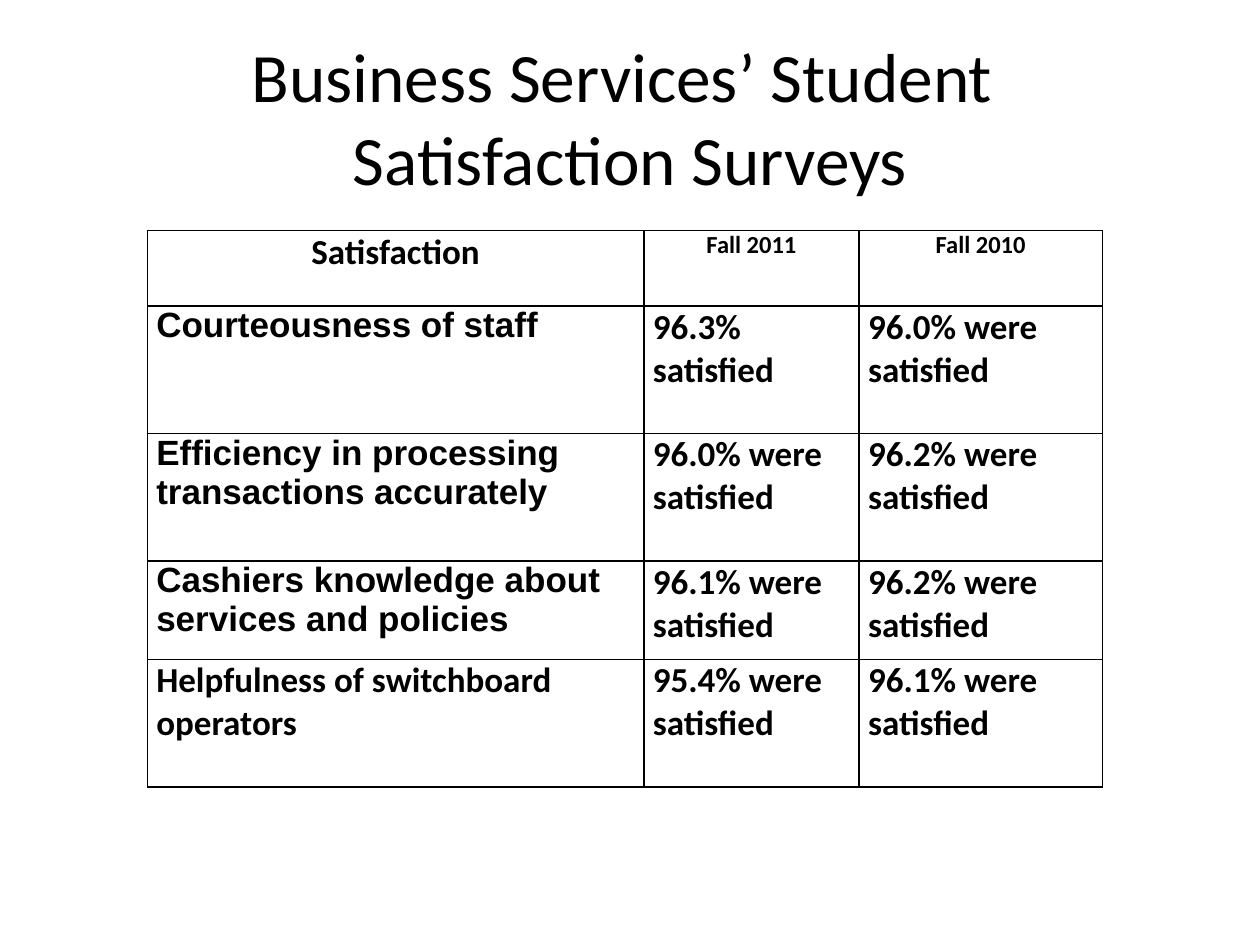
from lxml.etree import SubElement
from pptx import Presentation
from pptx.dml.color import RGBColor
from pptx.enum.text import MSO_ANCHOR, PP_ALIGN
from pptx.oxml.ns import qn
from pptx.util import Cm, Pt

COLORS = {"text": "000000", "border": "000000", "background": "FFFFFF"}
COLUMN_WIDTHS = [10.01, 4.34, 4.9]
ROW_HEIGHTS = [1.52, 2.57, 2.57, 1.98, 2.57]
ROWS = [
    ("Satisfaction", "Fall 2011", "Fall 2010"),
    ("Courteousness of staff", "96.3% satisfied", "96.0% were satisfied"),
    ("Efficiency in processing transactions accurately",
     "96.0% were satisfied", "96.2% were satisfied"),
    ("Cashiers knowledge about services and policies",
     "96.1% were satisfied", "96.2% were satisfied"),
    ("Helpfulness of switchboard operators",
     "95.4% were satisfied", "96.1% were satisfied"),
]
ARIAL_ROWS = (1, 2, 3)


def write_text(frame, text, size=20, font="Calibri", bold=False, align=PP_ALIGN.LEFT):
    frame.word_wrap = True
    paragraph = frame.paragraphs[0]
    paragraph.text = text
    paragraph.alignment = align
    for run in paragraph.runs:
        run.font.size = Pt(size)
        run.font.name = font
        run.font.bold = bold
        run.font.color.rgb = RGBColor.from_string(COLORS["text"])


def add_borders(cell, width=1):
    properties = cell._tc.get_or_add_tcPr()
    for side in ("lnL", "lnR", "lnT", "lnB"):
        line = SubElement(properties, qn(f"a:{side}"), w=str(Pt(width)))
        fill = SubElement(line, qn("a:solidFill"))
        SubElement(fill, qn("a:srgbClr"), val=COLORS["border"])


presentation = Presentation()
presentation.slide_width = Cm(25.4)
presentation.slide_height = Cm(19.05)
slide = presentation.slides.add_slide(presentation.slide_layouts[6])

title = slide.shapes.add_textbox(Cm(1.27), Cm(0.76), Cm(22.86), Cm(3.18))
title.text_frame.vertical_anchor = MSO_ANCHOR.MIDDLE
write_text(title.text_frame, "Business Services’ Student \vSatisfaction Surveys",
           size=39.6, align=PP_ALIGN.CENTER)

table = slide.shapes.add_table(
    len(ROWS), len(COLUMN_WIDTHS), Cm(2.97), Cm(4.65),
    Cm(sum(COLUMN_WIDTHS)), Cm(sum(ROW_HEIGHTS))).table
table.first_row = False
table.horz_banding = False
for column, width in zip(table.columns, COLUMN_WIDTHS):
    column.width = Cm(width)
for row, height in zip(table.rows, ROW_HEIGHTS):
    row.height = Cm(height)

for row_index, texts in enumerate(ROWS):
    for column_index, text in enumerate(texts):
        cell = table.cell(row_index, column_index)
        is_header = row_index == 0
        is_label = column_index == 0
        cell.margin_left = cell.margin_right = Cm(0.18)
        cell.margin_top = cell.margin_bottom = 0
        add_borders(cell)
        cell.fill.solid()
        cell.fill.fore_color.rgb = RGBColor.from_string(COLORS["background"])
        write_text(
            cell.text_frame, text, bold=True,
            size=14 if is_header and not is_label else 20,
            font="Arial" if is_label and row_index in ARIAL_ROWS else "Calibri",
            align=PP_ALIGN.CENTER if is_header else PP_ALIGN.LEFT)

presentation.save("out.pptx")
